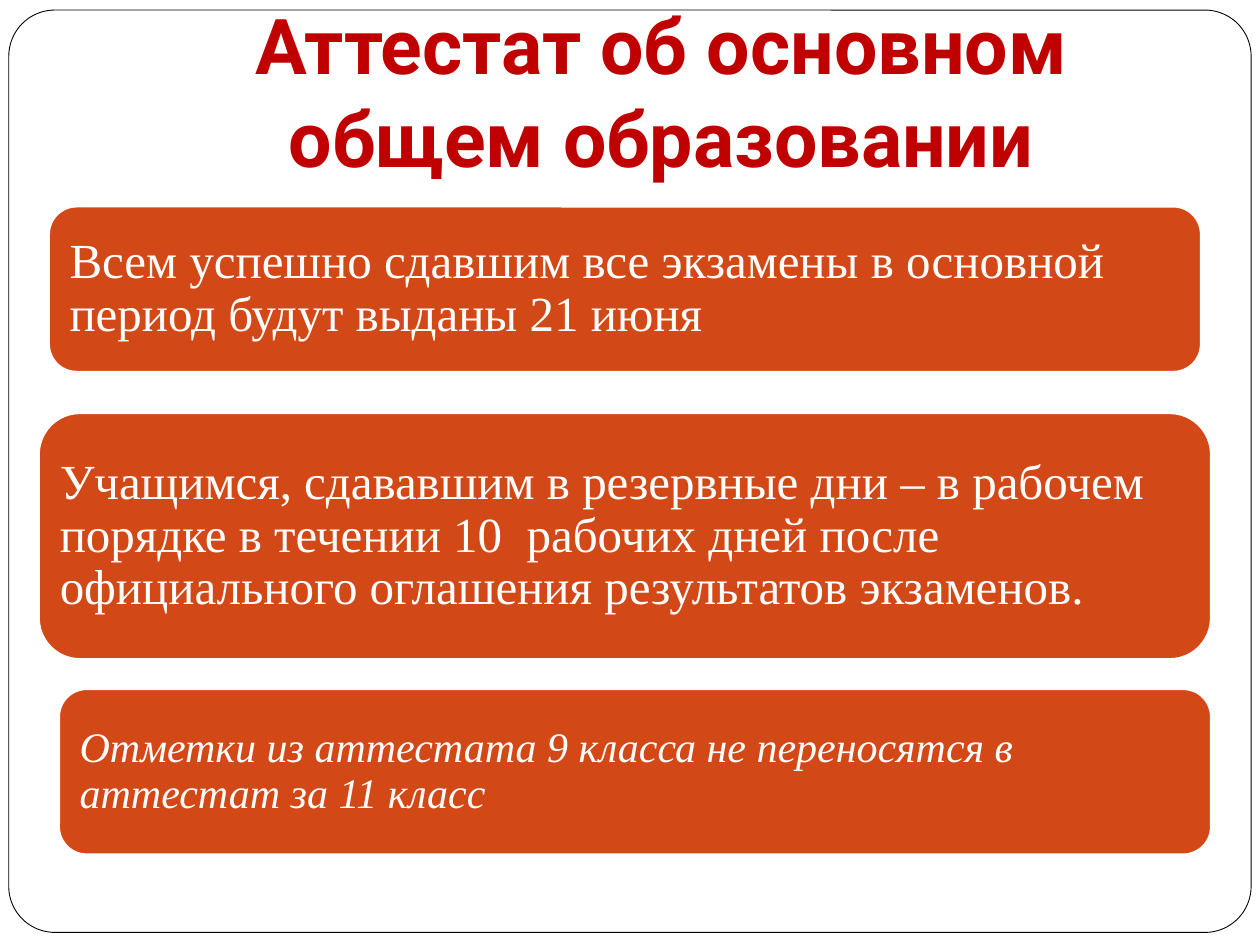
from pptx import Presentation
from pptx.dml.color import RGBColor
from pptx.enum.shapes import MSO_SHAPE
from pptx.enum.text import MSO_ANCHOR, PP_ALIGN
from pptx.util import Inches, Pt

WIDTH, HEIGHT = 10, 7.5
SERIF = "Times New Roman"
TEXT_PAD = 0.16     # card edge to text
CORNER = 0.1667     # default corner share of a rounded rectangle

# left, top, width, height, text, font format
CARDS = [
    (0.39, 1.64, 9.14, 1.31,
     "Всем успешно сдавшим все экзамены в основной период будут выданы 21 июня",
     {"size": Pt(28)}),
    (0.31, 3.28, 9.3, 1.95,
     "Учащимся, сдававшим в резервные дни – в рабочем порядке в течении 10  рабочих "
     "дней после официального оглашения результатов экзаменов.",
     {"size": Pt(28)}),
    (0.47, 5.47, 9.14, 1.31,
     "Отметки из аттестата 9 класса не переносятся в аттестат за 11 класс",
     {"size": Pt(24), "italic": True}),
]


def color(value):
    return RGBColor.from_string(value)


def set_text(sp, text, ink, font, anchor, align, insets, spacing=1.0):
    tf = sp.text_frame
    frame = {"word_wrap": True, "vertical_anchor": anchor}
    sides = ("margin_left", "margin_top", "margin_right", "margin_bottom")
    frame.update(zip(sides, map(Inches, insets)))
    for name, value in frame.items():
        setattr(tf, name, value)
    p = tf.paragraphs[0]
    p.alignment, p.line_spacing = align, spacing
    r = p.add_run()
    r.text = text
    for name, value in font.items():
        setattr(r.font, name, value)
    r.font.color.rgb = color(ink)


def add_round_box(s, left, top, width, height, fill, line, weight, corner=CORNER):
    sp = s.shapes.add_shape(MSO_SHAPE.ROUNDED_RECTANGLE,
                            *map(Inches, (left, top, width, height)))
    sp.adjustments[0] = corner
    sp.shadow.inherit = False
    sp.fill.solid()
    sp.fill.fore_color.rgb = color(fill)
    sp.line.color.rgb = color(line)
    sp.line.width = Pt(weight)
    return sp


def add_card(s, left, top, width, height, text, font):
    sp = add_round_box(s, left, top, width, height, "D34817", "FFFFFF", 1)
    # The rounded corner already insets the text by 0.29 of its radius
    side = round(TEXT_PAD - 0.29 * CORNER * height, 2)
    set_text(sp, text, "FFFFFF", {"name": SERIF, **font},
             MSO_ANCHOR.MIDDLE, PP_ALIGN.LEFT, [side, 0.1, side, 0.1], 0.9)


def add_title(s, text):
    sp = s.shapes.add_textbox(*map(Inches, (1, 0.3, 8.5, 1.25)))
    set_text(sp, text, "C00000", {"name": "Roboto", "size": Pt(44), "bold": True},
             MSO_ANCHOR.BOTTOM, PP_ALIGN.CENTER, [0.1, 0.05, 0.1, 0.1])


def main():
    prs = Presentation()
    prs.slide_width, prs.slide_height = Inches(WIDTH), Inches(HEIGHT)
    s = prs.slides.add_slide(prs.slide_layouts[6])

    # Slide frame
    add_round_box(s, 0.07, 0.08, WIDTH - 0.14, 7.32, "FFFFFF", "000000", 0.5, 0.05)

    # Title and statements
    add_title(s, "Аттестат об основном общем образовании")
    for card in CARDS:
        add_card(s, *card)

    prs.save("out.pptx")


if __name__ == "__main__":
    main()
